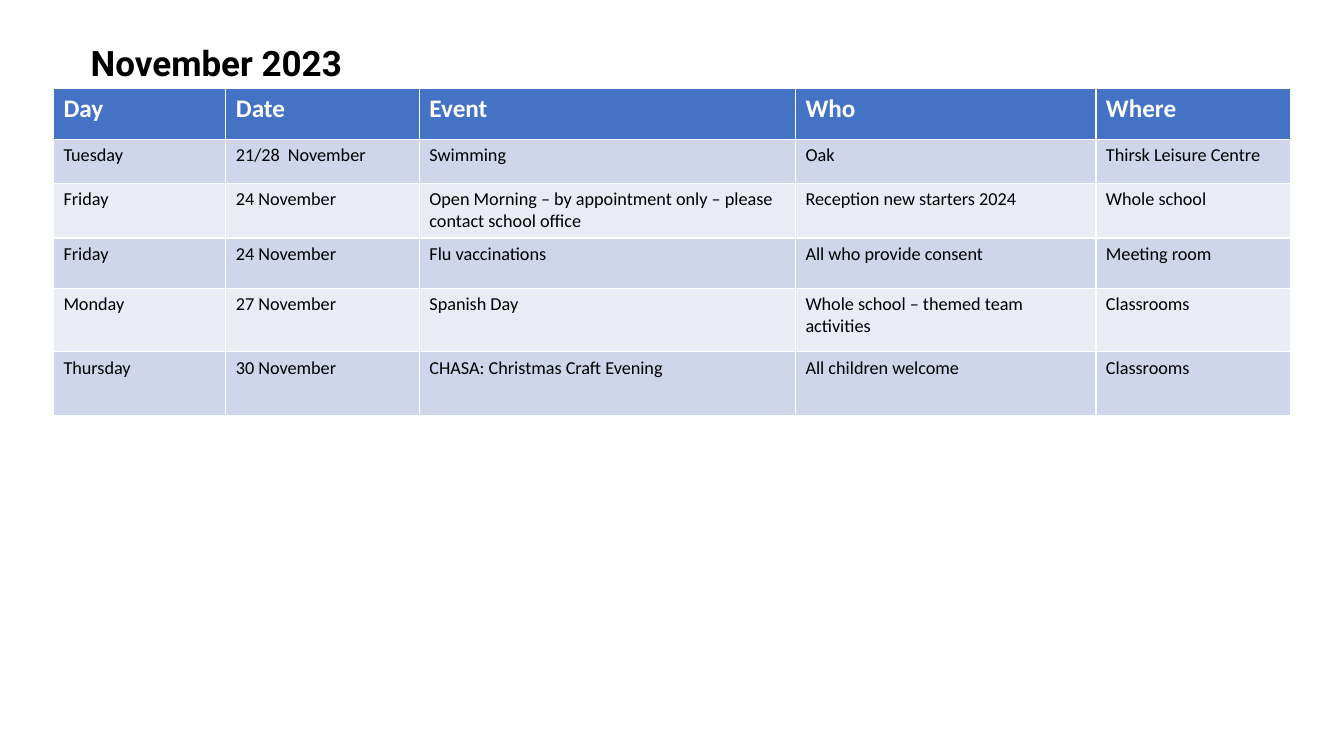
from pptx import Presentation
from pptx.dml.color import RGBColor
from pptx.enum.text import MSO_ANCHOR, MSO_AUTO_SIZE, PP_ALIGN
from pptx.util import Inches, Pt

LEFT = PP_ALIGN.LEFT
TOP = MSO_ANCHOR.TOP
NO_AUTOFIT = MSO_AUTO_SIZE.NONE
TITLE_ONLY = 5

COLORS = {
    "header": "4472C4",
    "odd_row": "CFD5EA",
    "even_row": "E9EBF5",
    "text": "000000",
    "header_text": "FFFFFF",
}

COLUMN_WIDTHS = [1.71, 1.92, 3.73, 2.98, 1.93]
ROW_HEIGHTS = [0.5, 0.44, 0.5, 0.5, 0.63, 0.63]
EVENTS = [
    ("Day", "Date", "Event", "Who", "Where"),
    ("Tuesday", "21/28  November", "Swimming", "Oak", "Thirsk Leisure Centre"),
    ("Friday", "24 November",
     "Open Morning – by appointment only – please contact school office",
     "Reception new starters 2024", "Whole school"),
    ("Friday", "24 November", "Flu vaccinations", "All who provide consent",
     "Meeting room"),
    ("Monday", "27 November", "Spanish Day",
     "Whole school – themed team activities", "Classrooms"),
    ("Thursday", "30 November", "CHASA: Christmas Craft Evening",
     "All children welcome", "Classrooms"),
]


def color(name):
    return RGBColor.from_string(COLORS[name])


def format_text(paragraph, font_name, size, color_name, bold):
    paragraph.alignment = LEFT
    for run in paragraph.runs:
        run.font.name = font_name
        run.font.size = Pt(size)
        run.font.bold = bold
        run.font.color.rgb = color(color_name)


def add_month_title(slide, left, top, width, height):
    month = slide.shapes.title
    month.left, month.top = Inches(left), Inches(top)
    month.width, month.height = Inches(width), Inches(height)
    frame = month.text_frame
    frame.text = "November 2023"
    frame.word_wrap = True
    frame.auto_size = NO_AUTOFIT
    frame.vertical_anchor = TOP
    format_text(frame.paragraphs[0], "Roboto", 25, "text", True)


def add_event_table(slide, left, top, width, height):
    """Fill the box with the calendar, scaling its columns and rows to fit."""
    calendar = slide.shapes.add_table(
        len(EVENTS), len(COLUMN_WIDTHS),
        Inches(left), Inches(top), Inches(width), Inches(height)).table
    for column, share in zip(calendar.columns, COLUMN_WIDTHS):
        column.width = Inches(width * share / sum(COLUMN_WIDTHS))
    for row, share in zip(calendar.rows, ROW_HEIGHTS):
        row.height = Inches(height * share / sum(ROW_HEIGHTS))

    for row_index, event in enumerate(EVENTS):
        is_header = row_index == 0
        if is_header:
            fill, text_color, size = "header", "header_text", 18
        else:
            fill = "odd_row" if row_index % 2 else "even_row"
            text_color, size = "text", 13
        for column_index, entry in enumerate(event):
            cell = calendar.cell(row_index, column_index)
            cell.fill.solid()
            cell.fill.fore_color.rgb = color(fill)
            cell.text_frame.text = entry
            format_text(cell.text_frame.paragraphs[0], "Calibri", size,
                        text_color, is_header)


def main():
    presentation = Presentation()
    presentation.slide_width = Inches(13.33)
    presentation.slide_height = Inches(7.5)
    slide = presentation.slides.add_slide(presentation.slide_layouts[TITLE_ONLY])
    add_month_title(slide, 0.8, 0.36, 4.45, 0.52)
    add_event_table(slide, 0.53, 0.88, 12.27, 3.2)
    presentation.save("out.pptx")


if __name__ == "__main__":
    main()
